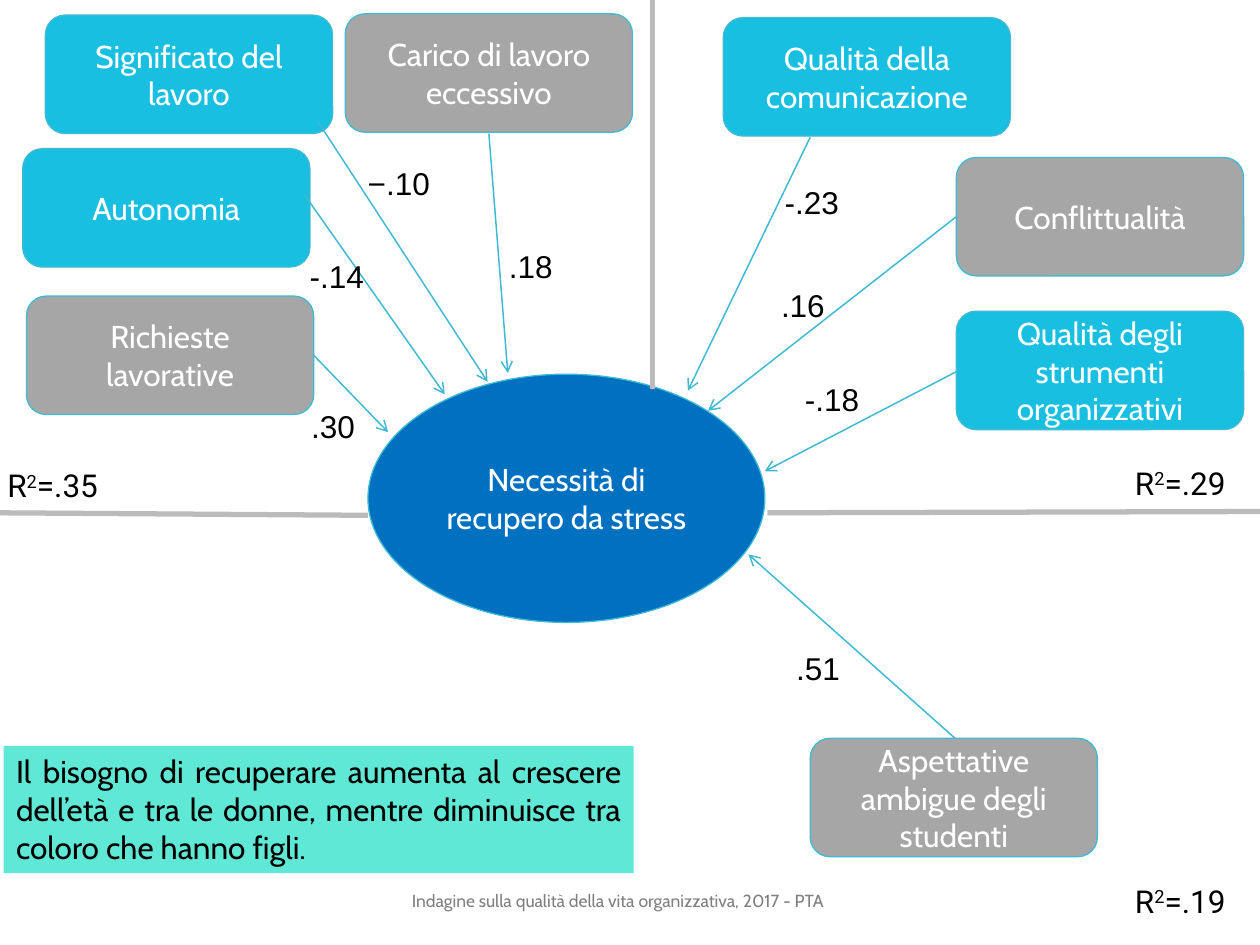
"""Build the slide on predictors of the need to recover from stress."""
from lxml.etree import SubElement
from pptx import Presentation
from pptx.dml.color import RGBColor
from pptx.enum.shapes import MSO_CONNECTOR, MSO_SHAPE
from pptx.enum.text import MSO_ANCHOR, PP_ALIGN
from pptx.oxml.ns import qn
from pptx.util import Inches, Pt

COLORS = {
    "resource": "19BFE0",
    "demand": "A6A6A6",
    "outcome": "0070C0",
    "outline": "40BAD2",
    "divider": "BBBBBB",
    "note": "5FE8D6",
    "footer": "808080",
    "white": "FFFFFF",
    "black": "000000",
}


def write(shape, runs, font, color="black", size=18, align=PP_ALIGN.LEFT,
          anchor=MSO_ANCHOR.TOP, wrap=True):
    frame = shape.text_frame
    frame.word_wrap = wrap
    frame.vertical_anchor = anchor
    para = frame.paragraphs[0]
    para.alignment = align
    for text in runs:
        span = para.add_run()
        span.text = text
        span.font.name = font
        span.font.size = Pt(size)
        span.font.color.rgb = RGBColor.from_string(COLORS[color])
    return para


def draw_line(page, start, end, color, width):
    line = page.shapes.add_connector(
        MSO_CONNECTOR.STRAIGHT, *[Inches(value) for value in (*start, *end)])
    line.line.color.rgb = RGBColor.from_string(COLORS[color])
    line.line.width = Pt(width)
    SubElement(line._element.spPr, qn("a:effectLst"))
    return line


deck = Presentation()
deck.slide_width = Inches(10)
deck.slide_height = Inches(7.5)
page = deck.slides.add_slide(deck.slide_layouts[6])

BOX_SIZE = (2.28, 0.94)
nodes = [
    ("Necessità di recupero da stress", "outcome", 2.92, 2.97),
    ("Autonomia", "resource", 0.18, 1.18),
    ("Carico di lavoro eccessivo", "demand", 2.74, 0.11),
    ("Significato del lavoro", "resource", 0.36, 0.12),
    ("Richieste lavorative", "demand", 0.21, 2.35),
    ("Qualità della comunicazione", "resource", 5.74, 0.14),
    ("Conflittualità", "demand", 7.59, 1.25),
    ("Qualità degli strumenti organizzativi", "resource", 7.59, 2.47),
    ("Aspettative ambigue degli studenti", "demand", 6.43, 5.86),
]
for text, role, left, top in nodes:
    is_outcome = role == "outcome"
    kind = MSO_SHAPE.OVAL if is_outcome else MSO_SHAPE.ROUNDED_RECTANGLE
    width, height = (3.15, 1.97) if is_outcome else BOX_SIZE
    box = page.shapes.add_shape(
        kind, Inches(left), Inches(top), Inches(width), Inches(height))
    box.shadow.inherit = False
    box.fill.solid()
    box.fill.fore_color.rgb = RGBColor.from_string(COLORS[role])
    box.line.color.rgb = RGBColor.from_string(COLORS["outline"])
    box.line.width = Pt(0.75)
    write(box, [text], "Cabin", "white", align=PP_ALIGN.CENTER,
          anchor=MSO_ANCHOR.MIDDLE)

effects = [
    ("−.10", (2.82, 1.25), 0.7, (2.52, 0.96), (3.87, 3.03)),
    (".18", (3.94, 1.91), 0.55, (3.88, 1.06), (4.03, 2.96)),
    ("-.14", (2.36, 1.99), 0.64, (2.42, 1.55), (3.53, 3.13)),
    (".30", (2.37, 3.18), 0.55, (2.49, 2.82), (3.08, 3.43)),
    ("-.23", (6.13, 1.4), 0.64, (6.43, 1.09), (5.46, 3.1)),
    (".16", (6.1, 2.22), 0.55, (7.59, 1.72), (5.62, 3.26)),
    ("-.18", (6.29, 2.97), 0.64, (7.59, 2.95), (6.07, 3.74)),
    (".51", (6.22, 5.1), 0.55, (7.58, 5.86), (5.94, 4.4)),
]
for coefficient, (left, top), width, start, end in effects:
    arrow = draw_line(page, start, end, "outline", 0.85)
    SubElement(arrow.line._get_or_add_ln(), qn("a:tailEnd"), type="arrow")
    label = page.shapes.add_textbox(
        Inches(left), Inches(top), Inches(width), Inches(0.4))
    write(label, [coefficient], "Arial", wrap=False)

for value, left, top in [("=.35", -0.04, 3.65), ("=.29", 8.91, 3.63),
                         ("=.19", 8.91, 6.95)]:
    label = page.shapes.add_textbox(
        Inches(left), Inches(top), Inches(0.97), Inches(0.4))
    para = write(label, ["R", "2", value], "Roboto")
    para.runs[1].font._element.set("baseline", "30000")

note = page.shapes.add_shape(
    MSO_SHAPE.RECTANGLE, Inches(0.03), Inches(5.92), Inches(5), Inches(1.01))
note.shadow.inherit = False
note.fill.solid()
note.fill.fore_color.rgb = RGBColor.from_string(COLORS["note"])
note.line.fill.background()
write(note, ["Il bisogno di recuperare aumenta al crescere dell’età e tra le "
             "donne, mentre diminuisce tra coloro che hanno figli."],
      "Cabin", align=PP_ALIGN.JUSTIFY)

footer = page.shapes.add_textbox(
    Inches(3.17), Inches(6.95), Inches(4.85), Inches(0.4))
write(footer, ["Indagine sulla qualità della vita organizzativa, 2017 - PTA"],
      "Cabin", "footer", size=10, anchor=MSO_ANCHOR.MIDDLE)

for start, end in [((2.92, 4.09), (-0.04, 4.07)), ((10, 4.06), (6.09, 4.07)),
                   ((5.18, 0), (5.18, 3.09))]:
    draw_line(page, start, end, "divider", 3)

deck.save("out.pptx")
